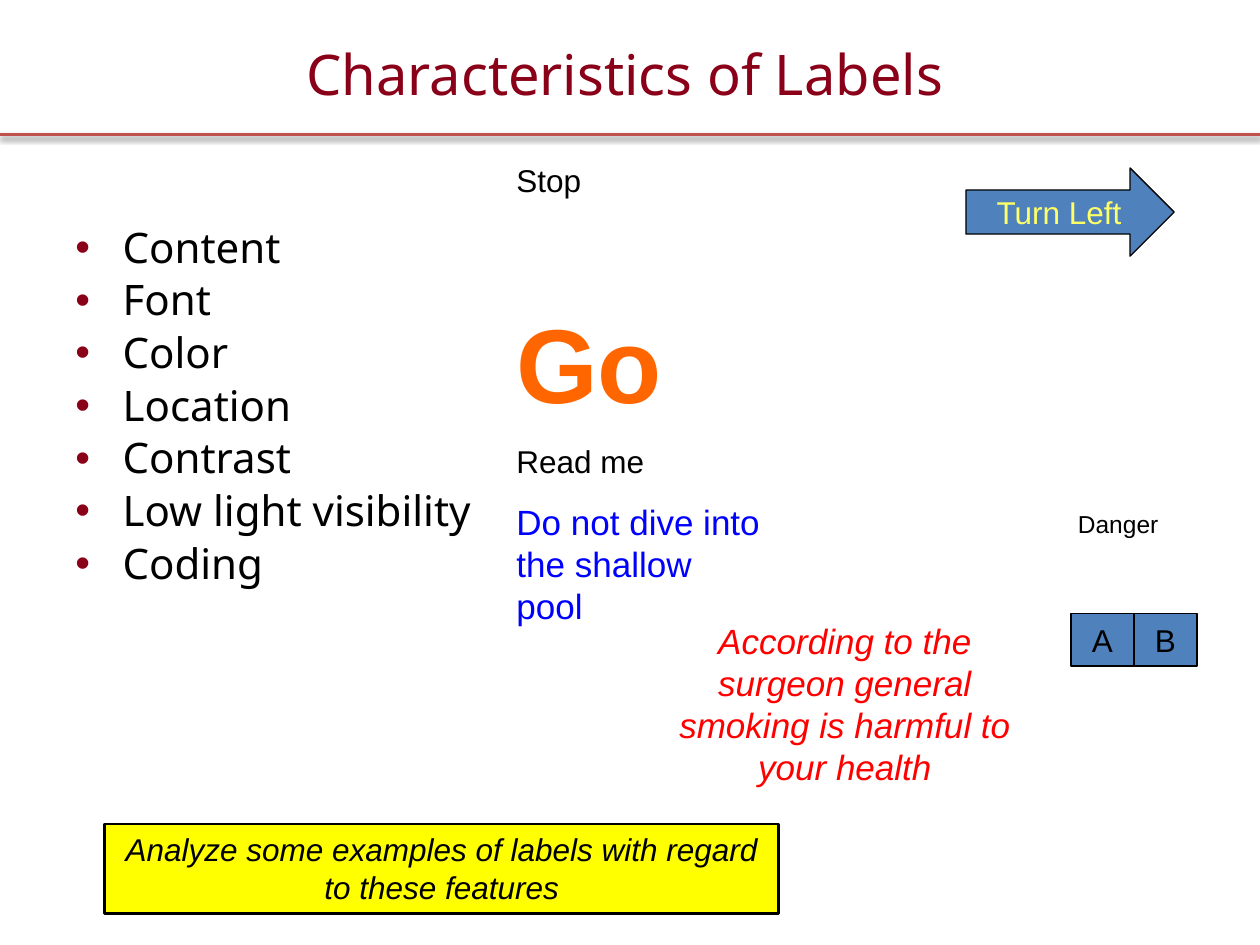
from lxml import etree
from pptx import Presentation
from pptx.dml.color import RGBColor
from pptx.enum.shapes import MSO_CONNECTOR, MSO_SHAPE
from pptx.enum.text import MSO_ANCHOR, PP_ALIGN
from pptx.oxml.ns import qn
from pptx.util import Pt

LEFT, CENTER = PP_ALIGN.LEFT, PP_ALIGN.CENTER
TOP, MIDDLE = MSO_ANCHOR.TOP, MSO_ANCHOR.MIDDLE
RECTANGLE, RIGHT_ARROW = MSO_SHAPE.RECTANGLE, MSO_SHAPE.RIGHT_ARROW
STRAIGHT = MSO_CONNECTOR.STRAIGHT

MAROON = RGBColor(0x89, 0x00, 0x18)
BRICK = RGBColor(0xC0, 0x50, 0x4D)
BLACK = RGBColor(0x00, 0x00, 0x00)
ORANGE = RGBColor(0xFF, 0x66, 0x00)
BLUE = RGBColor(0x00, 0x00, 0xFF)
RED = RGBColor(0xFF, 0x00, 0x00)
STEEL = RGBColor(0x4F, 0x81, 0xBD)
YELLOW = RGBColor(0xFF, 0xFF, 0x00)
PALE_YELLOW = RGBColor(0xFF, 0xFF, 0x66)

HEADING_FONT, LABEL_FONT = "Noto Sans", "Arial"
FEATURES = ["Content", "Font", "Color", "Location", "Contrast",
            "Low light visibility", "Coding"]
# text, size, colour, bold, space before
SAMPLE_LABELS = [
    ("Stop", 18, BLACK, False, 0),
    ("Go", 60, ORANGE, True, 57),
    ("Read me", 18, BLACK, False, 10),
    ("Do not dive into the shallow pool", 20, BLUE, False, 11.5),
]


def add_run(para, text, size, color, font=LABEL_FONT, bold=False, italic=False):
    span = para.add_run()
    span.text = text
    span.font.name = font
    span.font.size = Pt(size)
    span.font.color.rgb = color
    span.font.bold = bold
    span.font.italic = italic


def next_para(frame, index):
    return frame.add_paragraph() if index else frame.paragraphs[0]


def add_box(slide, left, top, width, height):
    box = slide.shapes.add_textbox(Pt(left), Pt(top), Pt(width), Pt(height))
    box.text_frame.word_wrap = True
    return box.text_frame


def add_label(slide, place, text, size, color, **style):
    para = add_box(slide, *place).paragraphs[0]
    para.alignment = CENTER
    add_run(para, text, size, color, **style)


def add_sign(slide, kind, place, text, fill, color, line_width=0.75,
             anchor=MIDDLE, wrap=False, italic=False):
    sign = slide.shapes.add_shape(kind, *[Pt(length) for length in place])
    sign.shadow.inherit = False
    sign.fill.solid()
    sign.fill.fore_color.rgb = fill
    sign.line.color.rgb = BLACK
    sign.line.width = Pt(line_width)
    frame = sign.text_frame
    frame.word_wrap = wrap
    frame.vertical_anchor = anchor
    para = frame.paragraphs[0]
    para.alignment = CENTER
    add_run(para, text, 18, color, italic=italic)


def add_rule(slide, top, width):
    rule = slide.shapes.add_connector(STRAIGHT, Pt(0), Pt(top), Pt(width), Pt(top))
    rule.line.color.rgb = BRICK
    rule.line.width = Pt(2)
    # Soft shadow straight below the rule
    effects = etree.SubElement(rule._element.spPr, qn("a:effectLst"))
    shadow = etree.SubElement(effects, qn("a:outerShdw"), blurRad=str(Pt(3.1)),
                              dist=str(Pt(1.6)), dir="5400000", rotWithShape="0")
    tint = etree.SubElement(shadow, qn("a:srgbClr"), val=str(BLACK))
    etree.SubElement(tint, qn("a:alpha"), val="38000")


def add_bullet(para, color):
    properties = para._p.get_or_add_pPr()
    properties.set("marL", str(Pt(27)))
    properties.set("indent", str(Pt(-27)))
    tint = etree.SubElement(properties, qn("a:buClr"))
    etree.SubElement(tint, qn("a:srgbClr"), val=str(color))
    etree.SubElement(properties, qn("a:buFont"), typeface=LABEL_FONT)
    etree.SubElement(properties, qn("a:buChar"), char="•")


def add_feature_list(slide):
    frame = add_box(slide, 36, 126, 648, 356.4)
    for index, feature in enumerate(FEATURES):
        para = next_para(frame, index)
        add_bullet(para, MAROON)
        para.line_spacing = 0.9
        para.space_before = Pt(4.2 if index else 0)
        add_run(para, feature, 24, BLACK, HEADING_FONT)


def add_sample_labels(slide):
    frame = add_box(slide, 288, 88.6, 157, 284.4)
    for index, (text, size, color, bold, gap) in enumerate(SAMPLE_LABELS):
        para = next_para(frame, index)
        para.alignment = LEFT
        para.space_before = Pt(gap)
        add_run(para, text, size, color, bold=bold)


def main():
    deck = Presentation()
    deck.slide_width, deck.slide_height = Pt(720), Pt(540)
    slide = deck.slides.add_slide(deck.slide_layouts[6])

    # Heading
    add_rule(slide, 77, 720)
    add_label(slide, (-2.9, 19, 720, 31), "Characteristics of Labels", 32, MAROON,
              font=HEADING_FONT)

    # Features and sample labels
    add_feature_list(slide)
    add_sample_labels(slide)
    add_sign(slide, RIGHT_ARROW, (552, 96, 119, 50.4), "Turn Left", STEEL, PALE_YELLOW)
    add_label(slide, (600, 287.3, 77.8, 23.8), "Danger", 14, BLACK)
    add_label(slide, (365.8, 350.6, 234, 79.2),
              "According to the surgeon general smoking is harmful to your health",
              20, RED, italic=True)
    for index, letter in enumerate("AB"):
        add_sign(slide, RECTANGLE, (612 + 36 * index, 350.6, 36, 30), letter,
                 STEEL, BLACK)

    # Exercise
    add_sign(slide, RECTANGLE, (59.8, 470.9, 385.2, 51),
             "Analyze some examples of labels with regard to these features",
             YELLOW, BLACK, line_width=1.5, anchor=TOP, wrap=True, italic=True)

    deck.save("out.pptx")


if __name__ == "__main__":
    main()
